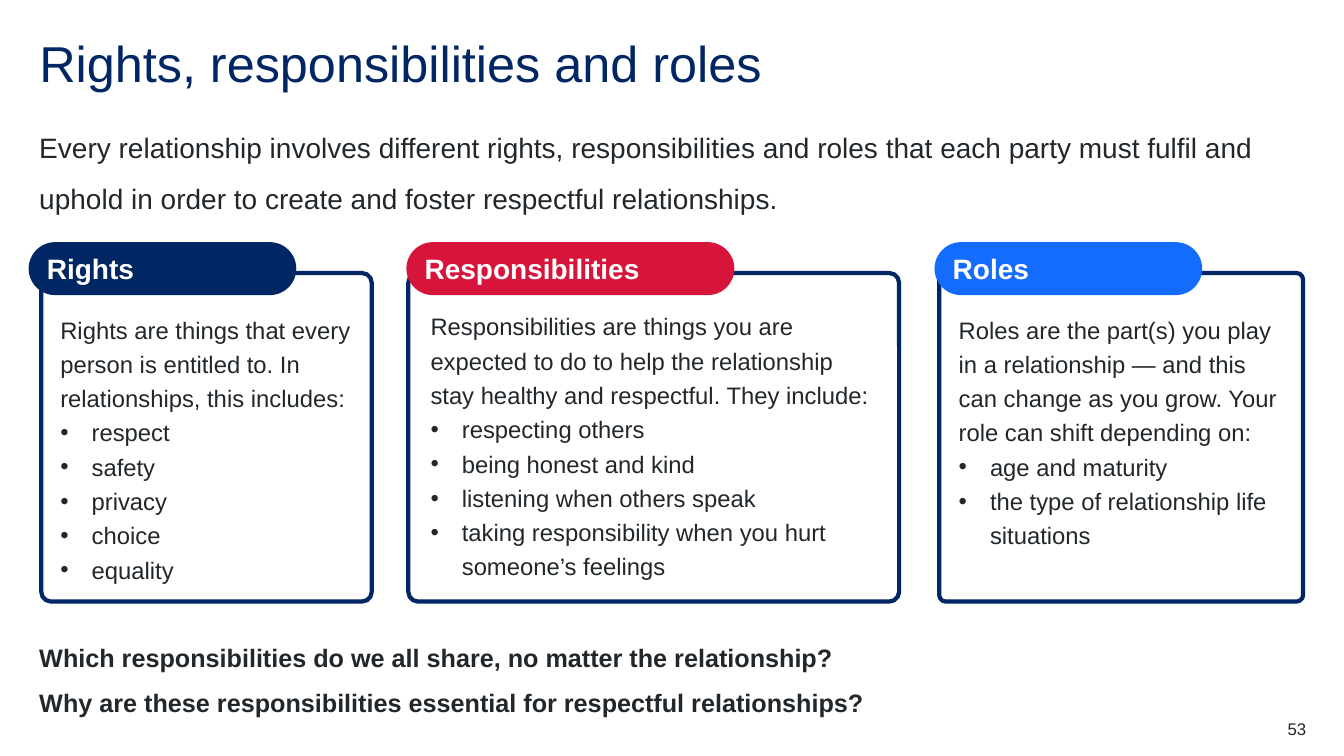
from dataclasses import dataclass

from lxml import etree
from pptx import Presentation
from pptx.dml.color import RGBColor
from pptx.enum.shapes import MSO_SHAPE
from pptx.enum.text import MSO_ANCHOR, MSO_AUTO_SIZE, PP_ALIGN
from pptx.oxml.ns import qn
from pptx.util import Cm, Pt

ROUNDED = MSO_SHAPE.ROUNDED_RECTANGLE
TOP, MIDDLE = MSO_ANCHOR.TOP, MSO_ANCHOR.MIDDLE
LEFT, RIGHT = PP_ALIGN.LEFT, PP_ALIGN.RIGHT
NO_AUTOFIT = MSO_AUTO_SIZE.NONE
TITLE_ONLY = 5


@dataclass(frozen=True)
class Theme:
    font: str = "Arial"
    navy: RGBColor = RGBColor(0x00, 0x26, 0x64)
    red: RGBColor = RGBColor(0xD7, 0x15, 0x3A)
    blue: RGBColor = RGBColor(0x14, 0x6C, 0xFD)
    white: RGBColor = RGBColor(0xFF, 0xFF, 0xFF)
    text: RGBColor = RGBColor(0x22, 0x27, 0x2B)
    title_size: int = 36
    lead_size: int = 20
    question_size: int = 18
    body_size: int = 17
    number_size: int = 12


theme = Theme()
presentation = Presentation()
presentation.slide_width, presentation.slide_height = Cm(33.87), Cm(19.05)
slide = presentation.slides.add_slide(presentation.slide_layouts[TITLE_ONLY])


def write_text(shape, lines, size, color=theme.text, bold=False, spacing=1.0,
               align=LEFT, anchor=TOP, inset=False):
    """Fill a shape with one paragraph per line and return the paragraphs."""
    frame = shape.text_frame
    frame.text = "\n".join(lines)
    frame.word_wrap = True
    frame.auto_size = NO_AUTOFIT
    frame.vertical_anchor = anchor
    if not inset:
        frame.margin_left = frame.margin_top = 0
        frame.margin_right = frame.margin_bottom = 0
    for paragraph in frame.paragraphs:
        paragraph.alignment = align
        paragraph.line_spacing = spacing
        font = paragraph.font
        font.name, font.size, font.bold = theme.font, Pt(size), bold
        font.color.rgb = color
    return frame.paragraphs


def add_rounded(left, top, width, height, corner, fill, line, line_width):
    """Add a rounded rectangle without a shadow."""
    shape = slide.shapes.add_shape(ROUNDED, Cm(left), Cm(top), Cm(width), Cm(height))
    shape.adjustments[0] = corner
    shape.shadow.inherit = False
    shape.fill.solid()
    shape.fill.fore_color.rgb = fill
    shape.line.color.rgb = line
    shape.line.width = Pt(line_width)
    return shape


# Title
margin, full_width = 0.99, 31.9
title = slide.shapes.title
title.left, title.top, title.width, title.height = Cm(margin), Cm(0.99), Cm(full_width), Cm(1.52)
write_text(title, ["Rights, responsibilities and roles"], theme.title_size, theme.navy, spacing=0.9)

# Introduction
introduction = slide.shapes.add_textbox(Cm(margin), Cm(2.87), Cm(full_width), Cm(3))
write_text(
    introduction,
    ["Every relationship involves different rights, responsibilities and roles that each party "
     "must fulfil and uphold in order to create and foster respectful relationships."],
    theme.lead_size, spacing=1.5)

# Cards: heading, colour, card (left, width, corner), tab (left, width),
# text (left, top, width), lead-in, bullets
cards = [
    ("Rights", theme.navy, (1.04, 8.33, 0.03), (0.74, 6.71), (1.52, 7.8, 7.92),
     "Rights are things that every person is entitled to. In relationships, this includes:",
     ["respect", "safety", "privacy", "choice", "equality"]),
    ("Responsibilities", theme.red, (10.29, 12.37, 0.03), (10.26, 8.23), (10.85, 7.72, 11.33),
     "Responsibilities are things you are expected to do to help the relationship stay healthy "
     "and respectful. They include:",
     ["respecting others", "being honest and kind", "listening when others speak",
      "taking responsibility when you hurt someone’s feelings"]),
    ("Roles", theme.blue, (23.67, 9.17, 0.02), (23.57, 6.71), (24.16, 7.8, 8.33),
     "Roles are the part(s) you play in a relationship — and this can change as you grow. "
     "Your role can shift depending on:",
     ["age and maturity", "the type of relationship life situations"]),
]
bullet_indent = Cm(0.79)
for heading, color, card, tab, text, lead_in, bullets in cards:
    card_left, card_width, corner = card
    add_rounded(card_left, 6.88, card_width, 8.28, corner, theme.white, theme.navy, 3)

    tab_left, tab_width = tab
    tab_shape = add_rounded(tab_left, 6.12, tab_width, 1.3, 0.5, color, color, 1)
    write_text(tab_shape, [heading], theme.lead_size, theme.white, bold=True,
               anchor=MIDDLE, inset=True)

    text_left, text_top, text_width = text
    card_text = slide.shapes.add_textbox(Cm(text_left), Cm(text_top), Cm(text_width), Cm(7.2))
    paragraphs = write_text(card_text, [lead_in, *bullets], theme.body_size, spacing=1.2)
    for paragraph in paragraphs[1:]:
        properties = paragraph._p.get_or_add_pPr()
        properties.set("marL", str(bullet_indent))
        properties.set("indent", str(-bullet_indent))
        bullet_font = etree.Element(qn("a:buFont"), typeface=theme.font)
        bullet_mark = etree.Element(qn("a:buChar"), char="•")
        properties.find(qn("a:lnSpc")).addnext(bullet_font)
        bullet_font.addnext(bullet_mark)

# Discussion questions
questions = slide.shapes.add_textbox(Cm(margin), Cm(15.8), Cm(full_width), Cm(2.08))
write_text(
    questions,
    ["Which responsibilities do we all share, no matter the relationship?",
     "Why are these responsibilities essential for respectful relationships?"],
    theme.question_size, bold=True, spacing=1.5)

# Slide number
number = slide.shapes.add_textbox(Cm(30.91), Cm(18.11), Cm(2.01), Cm(0.51))
write_text(number, ["53"], theme.number_size, align=RIGHT)

presentation.save("out.pptx")
